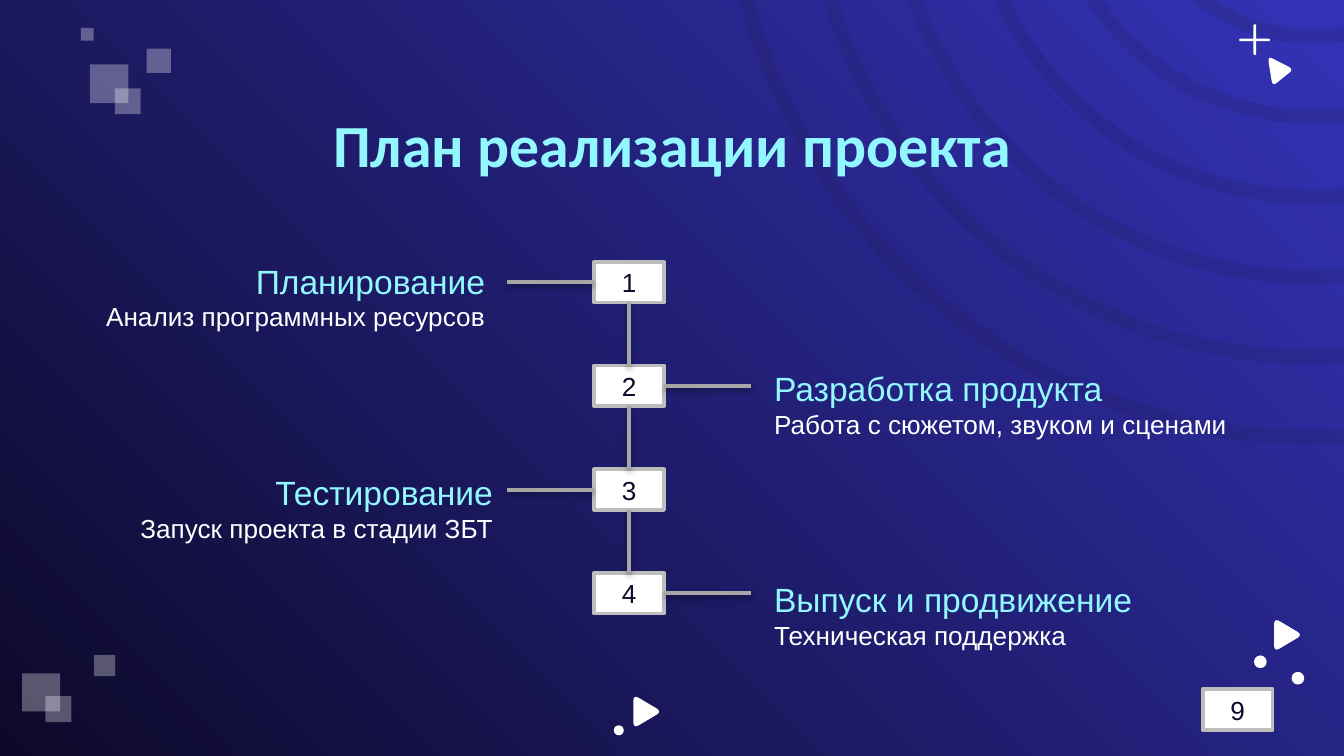
from dataclasses import dataclass

from lxml import etree
from pptx import Presentation
from pptx.dml.color import RGBColor
from pptx.enum.shapes import MSO_CONNECTOR, MSO_SHAPE
from pptx.enum.text import MSO_ANCHOR, MSO_AUTO_SIZE, PP_ALIGN
from pptx.oxml.ns import qn
from pptx.util import Cm, Pt

NIGHT = RGBColor(0x0D, 0x09, 0x2A)
BLUE = RGBColor(0x33, 0x33, 0xB8)
RING = RGBColor(0x20, 0x1A, 0x4A)
WHITE = RGBColor(0xFF, 0xFF, 0xFF)
AQUA = RGBColor(0x92, 0xF7, 0xFF)
BORDER = RGBColor(0xBD, 0xBD, 0xBD)
GREY = RGBColor(0xA6, 0xA6, 0xA6)

RECTANGLE, OVAL = MSO_SHAPE.RECTANGLE, MSO_SHAPE.OVAL
DONUT, ROUNDED = MSO_SHAPE.DONUT, MSO_SHAPE.ROUNDED_RECTANGLE
STRAIGHT = MSO_CONNECTOR.STRAIGHT
LEFT, CENTER, RIGHT = PP_ALIGN.LEFT, PP_ALIGN.CENTER, PP_ALIGN.RIGHT
MIDDLE = MSO_ANCHOR.MIDDLE
GROW = MSO_AUTO_SIZE.SHAPE_TO_FIT_TEXT
SIDE_TOP, SIDE_LEFT, SIDE_BOTTOM, SIDE_RIGHT = range(4)

# All lengths below are centimetres
NODE_LEFT, NODE_TOP, NODE_STEP = 11.23, 4.95, 1.96
NODE_WIDTH, NODE_HEIGHT = 1.32, 0.77
BRANCH = 1.65
RING_X, RING_Y, RING_BAND = 24.8, -2.77, 0.27


@dataclass
class Stage:
    name: str
    detail: str
    left: float
    top: float
    width: float
    height: float
    align: PP_ALIGN


@dataclass
class Mark:
    kind: MSO_SHAPE
    left: float
    top: float
    width: float
    height: float
    opacity: int = 100


def square(left: float, top: float, size: float) -> Mark:
    return Mark(RECTANGLE, left, top, size, size, 31)


def dot(left: float, top: float, size: float) -> Mark:
    return Mark(OVAL, left, top, size, size)


def ring(radius: float) -> Mark:
    return Mark(DONUT, RING_X - radius, RING_Y - radius, 2 * radius, 2 * radius, 17)


RINGS = [ring(11.17 - 1.515 * index) for index in range(6)]
MARKS = [
    square(1.7, 1.22, 0.73), square(2.17, 1.67, 0.49),
    square(2.77, 0.92, 0.46), square(1.53, 0.53, 0.24),
    square(1.78, 12.38, 0.4), square(0.42, 12.73, 0.72), square(0.86, 13.16, 0.49),
    Mark(ROUNDED, 23.69, 0.46, 0.05, 0.58), Mark(ROUNDED, 23.42, 0.73, 0.58, 0.05),
    dot(24.41, 12.7, 0.24), dot(23.7, 12.39, 0.24), dot(11.6, 13.71, 0.19),
]
TRIANGLES = [[(23.96, 1.06), (24.05, 1.63), (24.45, 1.31)]] + [
    [(left, middle - 0.32), (left, middle + 0.32), (left + 0.54, middle)]
    for left, middle in ((24.08, 12.0), (11.97, 13.45))
]
STAGES = [
    Stage("Планирование", "Анализ программных ресурсов", 1.7, 4.8, 7.72, 2.82, RIGHT),
    Stage("Разработка продукта", "Работа с сюжетом, звуком и сценами",
          14.38, 6.83, 9.19, 1.63, LEFT),
    Stage("Тестирование", "Запуск проекта в стадии ЗБТ", 2.31, 8.79, 7.26, 2.82, RIGHT),
    Stage("Выпуск и продвижение", "Техническая поддержка",
          14.38, 10.82, 7.37, 1.63, LEFT),
]


def paint(shape, color: RGBColor, opacity: int = 100) -> None:
    shape.shadow.inherit = False
    shape.fill.solid()
    shape.fill.fore_color.rgb = color
    shape.line.fill.background()
    if opacity < 100:
        tone = shape._element.spPr.find(".//" + qn("a:srgbClr"))
        etree.SubElement(tone, qn("a:alpha"), val=str(opacity * 1000))


def draw_mark(page, mark: Mark, color: RGBColor) -> None:
    shape = page.shapes.add_shape(
        mark.kind, Cm(mark.left), Cm(mark.top), Cm(mark.width), Cm(mark.height))
    if mark.kind == DONUT:
        shape.adjustments[0] = RING_BAND / mark.width
    elif mark.kind == ROUNDED:
        shape.adjustments[0] = 0.5
    paint(shape, color, mark.opacity)


def draw_triangle(page, corners: list, cut: float = 0.2, steps: int = 6) -> None:
    """Round each corner with a quadratic curve."""
    outline = []
    for index, corner in enumerate(corners):
        before, after = corners[index - 1], corners[(index + 1) % 3]
        for step in range(steps + 1):
            t = step / steps
            outline.append(tuple(
                Cm(c + cut * ((1 - t) ** 2 * (b - c) + t ** 2 * (a - c)))
                for b, c, a in zip(before, corner, after)))
    builder = page.shapes.build_freeform(*outline[0])
    builder.add_line_segments(outline[1:])
    paint(builder.convert_to_shape(), WHITE)


def add_span(para, text: str, size: int, color: RGBColor, font: str = "Arial"):
    span = para.add_run()
    span.text = text
    span.font.size = Pt(size)
    span.font.name = font
    span.font.color.rgb = color
    return span


def draw_node(page, text: str, left: float, top: float):
    box = page.shapes.add_shape(
        RECTANGLE, Cm(left), Cm(top), Cm(NODE_WIDTH), Cm(NODE_HEIGHT))
    paint(box, WHITE)
    box.line.color.rgb = BORDER
    box.line.width = Pt(2)
    box.text_frame.vertical_anchor = MIDDLE
    para = box.text_frame.paragraphs[0]
    para.alignment = CENTER
    add_span(para, text, 14, NIGHT)
    return box


def draw_line(page, start, side: int, end_x: int = 0, end_y: int = 0):
    line = page.shapes.add_connector(STRAIGHT, start.left, start.top, end_x, end_y)
    line.begin_connect(start, side)
    line.line.color.rgb = GREY
    line.line.width = Pt(2)
    effects = etree.SubElement(line._element.spPr, qn("a:effectLst"))
    shadow = etree.SubElement(effects, qn("a:outerShdw"), blurRad="40000",
                              dist="20000", dir="5400000", rotWithShape="0")
    tone = etree.SubElement(shadow, qn("a:srgbClr"), val="000000")
    etree.SubElement(tone, qn("a:alpha"), val="38000")
    return line


def draw_stage(page, stage: Stage, node) -> None:
    middle = node.top + node.height // 2
    if stage.align == RIGHT:
        draw_line(page, node, SIDE_LEFT, node.left - Cm(BRANCH), middle)
    else:
        draw_line(page, node, SIDE_RIGHT, node.left + node.width + Cm(BRANCH), middle)
    box = page.shapes.add_textbox(
        Cm(stage.left), Cm(stage.top), Cm(stage.width), Cm(stage.height))
    frame = box.text_frame
    frame.word_wrap = False
    frame.auto_size = GROW
    name, detail = frame.paragraphs[0], frame.add_paragraph()
    name.alignment = detail.alignment = stage.align
    add_span(name, stage.name, 18, AQUA)
    add_span(detail, stage.detail, 14, WHITE)


def main() -> None:
    deck = Presentation()
    deck.slide_width, deck.slide_height = Cm(25.4), Cm(14.29)
    page = deck.slides.add_slide(deck.slide_layouts[6])

    # Background and decoration
    backdrop = page.background.fill
    backdrop.gradient()
    backdrop.gradient_angle = 45
    for stop, color in zip(backdrop.gradient_stops, (NIGHT, BLUE)):
        stop.color.rgb = color
    for mark in RINGS:
        draw_mark(page, mark, RING)
    for mark in MARKS:
        draw_mark(page, mark, WHITE)
    for corners in TRIANGLES:
        draw_triangle(page, corners)

    # Title
    title = page.shapes.add_textbox(Cm(1.6), Cm(2.06), Cm(22.22), Cm(1.32)).text_frame
    title.word_wrap = True
    title.vertical_anchor = MIDDLE
    title.paragraphs[0].alignment = CENTER
    add_span(title.paragraphs[0], "План реализации проекта", 32, AQUA, "Calibri").font.bold = True

    # Timeline
    nodes = [draw_node(page, str(index + 1), NODE_LEFT, NODE_TOP + index * NODE_STEP)
             for index in range(len(STAGES))]
    for upper, lower in zip(nodes, nodes[1:]):
        draw_line(page, upper, SIDE_BOTTOM).end_connect(lower, SIDE_TOP)
    for stage, node in zip(STAGES, nodes):
        draw_stage(page, stage, node)

    # Page number
    draw_node(page, "9", 22.73, 13.03)
    deck.save("out.pptx")


if __name__ == "__main__":
    main()
